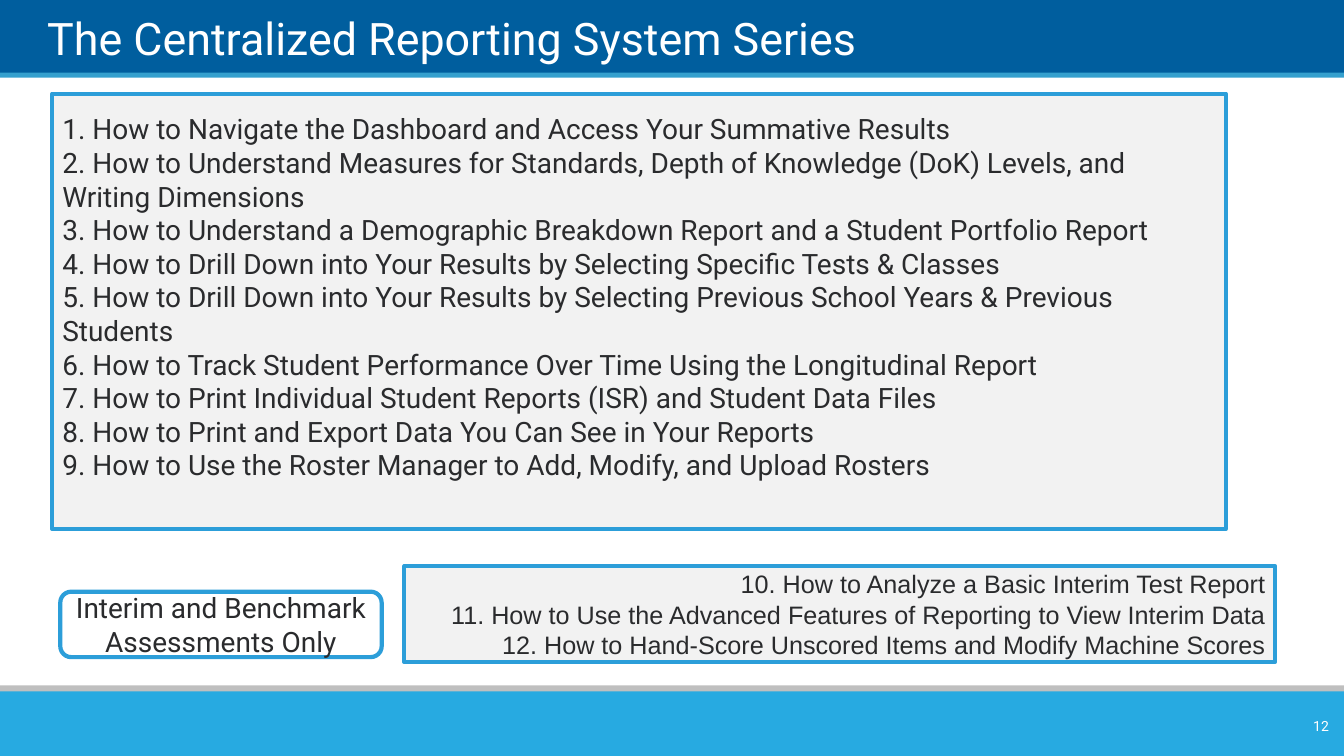
"""Build the slide that lists the Centralized Reporting System series."""
from dataclasses import dataclass

from pptx import Presentation
from pptx.dml.color import RGBColor
from pptx.enum.shapes import MSO_SHAPE
from pptx.enum.text import MSO_ANCHOR, MSO_AUTO_SIZE, PP_ALIGN
from pptx.util import Cm, Pt

RECTANGLE, ROUNDED = MSO_SHAPE.RECTANGLE, MSO_SHAPE.ROUNDED_RECTANGLE
LEFT, CENTER, RIGHT = PP_ALIGN.LEFT, PP_ALIGN.CENTER, PP_ALIGN.RIGHT
MIDDLE, BOTTOM = MSO_ANCHOR.MIDDLE, MSO_ANCHOR.BOTTOM
NO_AUTOFIT = MSO_AUTO_SIZE.NONE


@dataclass(frozen=True)
class Theme:
    """Colours, fonts and type sizes of the slide."""
    navy: str = "005E9E"
    trim: str = "35A0CE"
    gray: str = "BFBFBF"
    sky: str = "27AAE1"
    panel: str = "F2F2F2"
    border: str = "2C9ED9"
    ink: str = "2A2B2D"
    white: str = "FFFFFF"
    main_font: str = "Roboto"
    interim_font: str = "Arial"
    title_size: int = 32
    body_size: int = 20
    interim_size: int = 18
    number_size: int = 10


THEME = Theme()
SLIDE_WIDTH, SLIDE_HEIGHT = 33.87, 19.05
TITLE = "The Centralized Reporting System Series"
PAGE_NUMBER = "12"
SERIES = [
    "How to Navigate the Dashboard and Access Your Summative Results",
    "How to Understand Measures for Standards, Depth of Knowledge (DoK) Levels, and Writing Dimensions",
    "How to Understand a Demographic Breakdown Report and a Student Portfolio Report",
    "How to Drill Down into Your Results by Selecting Specific Tests & Classes",
    "How to Drill Down into Your Results by Selecting Previous School Years & Previous Students",
    "How to Track Student Performance Over Time Using the Longitudinal Report",
    "How to Print Individual Student Reports (ISR) and Student Data Files",
    "How to Print and Export Data You Can See in Your Reports",
    "How to Use the Roster Manager to Add, Modify, and Upload Rosters",
]
INTERIM = [
    "How to Analyze a Basic Interim Test Report",
    "How to Use the Advanced Features of Reporting to View Interim Data",
    "How to Hand-Score Unscored Items and Modify Machine Scores",
]
INTERIM_LABEL = "Interim and Benchmark Assessments Only"
BANDS = [
    (-0.03, 1.91, THEME.navy),
    (1.83, 0.13, THEME.trim),
    (17.27, 0.36, THEME.gray),
    (17.42, 1.63, THEME.sky),
]
BODY = {"name": THEME.main_font, "size": Pt(THEME.body_size)}
INTERIM_BODY = {"name": THEME.interim_font, "size": Pt(THEME.interim_size)}
NUMBER = {"name": THEME.main_font, "size": Pt(THEME.number_size)}
HEADING = {"name": THEME.main_font, "size": Pt(THEME.title_size)}


def apply(target, values):
    """Set each attribute in values on target."""
    for name, value in values.items():
        setattr(target, name, value)


def numbered(items, start):
    """Return the items with their place in the series in front."""
    return [f"{number}. {item}" for number, item in enumerate(items, start)]


def write(shape, lines, font, color, alignment, **frame_format):
    """Fill a shape with one formatted paragraph per line."""
    frame = shape.text_frame
    frame.text = "\n".join(lines)
    apply(frame, {"word_wrap": True, "auto_size": NO_AUTOFIT,
                  "vertical_anchor": MIDDLE, **frame_format})
    for paragraph in frame.paragraphs:
        paragraph.alignment = alignment
        for run in paragraph.runs:
            apply(run.font, font)
            run.font.color.rgb = RGBColor.from_string(color)


def add_box(slide, kind, box, fill=None, line=None):
    """Add a flat preset shape at box, given in centimetres."""
    shape = slide.shapes.add_shape(kind, *map(Cm, box))
    shape.shadow.inherit = False
    if fill:
        shape.fill.solid()
        shape.fill.fore_color.rgb = RGBColor.from_string(fill)
    else:
        shape.fill.background()
    if line:
        shape.line.color.rgb = RGBColor.from_string(line)
        shape.line.width = Pt(3)
    else:
        shape.line.fill.background()
    return shape


def main():
    """Build and save the presentation."""
    presentation = Presentation()
    apply(presentation, {"slide_width": Cm(SLIDE_WIDTH), "slide_height": Cm(SLIDE_HEIGHT)})
    slide = presentation.slides.add_slide(presentation.slide_layouts[5])

    for top, height, color in BANDS:
        add_box(slide, RECTANGLE, (0, top, SLIDE_WIDTH, height), color)

    page_number = slide.shapes.add_textbox(Cm(31.78), Cm(17.91), Cm(1.96), Cm(0.76))
    write(page_number, [PAGE_NUMBER], NUMBER, THEME.white, RIGHT)

    title = slide.shapes.title
    apply(title, {"left": Cm(1.19), "top": Cm(0.18), "width": Cm(31.57), "height": Cm(1.45)})
    write(title, [TITLE], HEADING, THEME.white, LEFT, vertical_anchor=BOTTOM,
          margin_left=0, margin_top=0, margin_right=0, margin_bottom=0)
    slide.shapes.element.append(title.element)

    interim = add_box(slide, RECTANGLE, (10.19, 14.27, 21.95, 2.41), THEME.panel, THEME.border)
    write(interim, numbered(INTERIM, len(SERIES) + 1), INTERIM_BODY, THEME.ink, RIGHT)

    series = add_box(slide, RECTANGLE, (1.32, 2.36, 29.57, 10.97), THEME.panel, THEME.border)
    write(series, numbered(SERIES, 1), BODY, THEME.ink, LEFT, margin_bottom=Cm(0.86))

    label = add_box(slide, ROUNDED, (1.52, 14.91, 8.1, 1.65), line=THEME.border)
    write(label, [INTERIM_LABEL], BODY, THEME.ink, CENTER)

    presentation.save("out.pptx")


if __name__ == "__main__":
    main()
